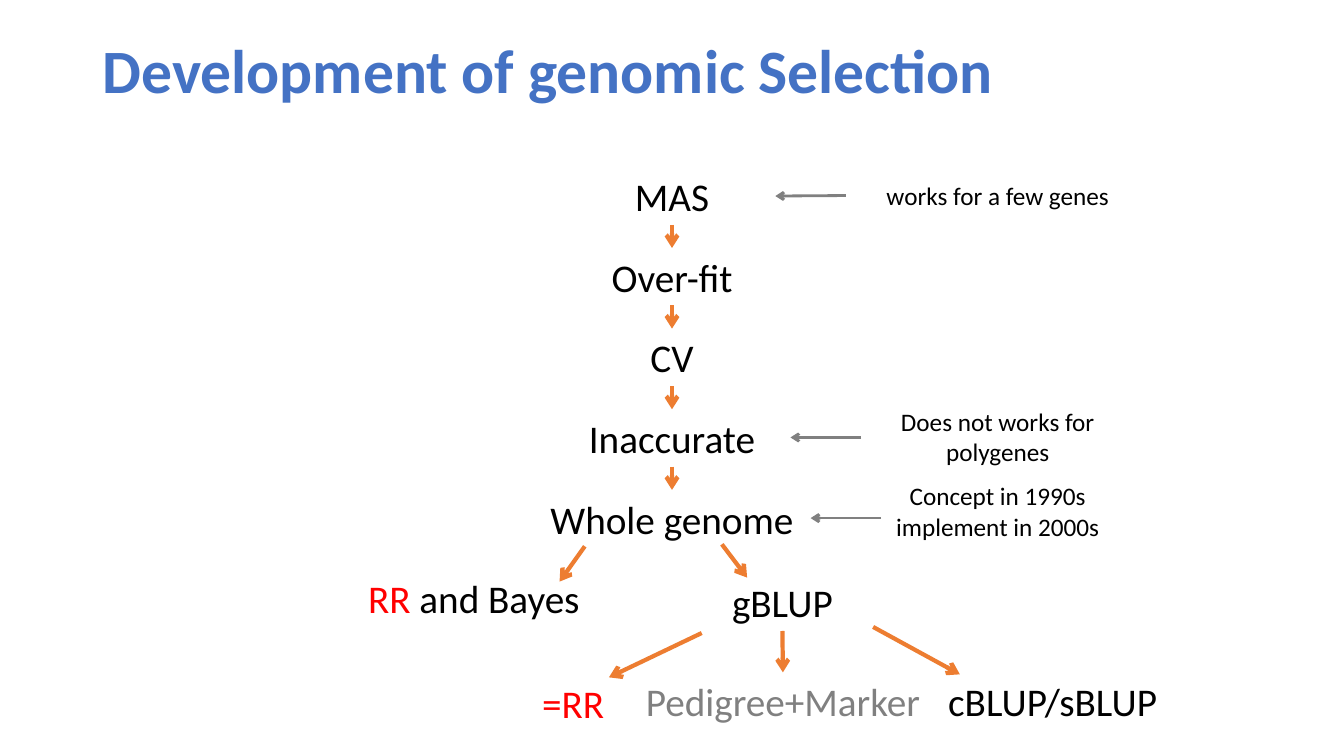
from itertools import pairwise

from lxml import etree
from pptx import Presentation
from pptx import util as u
from pptx.dml.color import RGBColor
from pptx.enum import shapes, text
from pptx.oxml.ns import qn

COLORS = {"title": "4472C4", "text": "000000", "red": "FF0000",
          "gray": "808080", "orange": "ED7D31"}
TOP, LEFT, BOTTOM, RIGHT = range(4)
LABEL_HEIGHT = 0.57
STEP_PITCH = 0.8


def add_label(slide, box, parts, size=28):
    """Add a centred text box whose runs are (wording, colour) pairs."""
    label = slide.shapes.add_textbox(*map(u.Inches, box))
    frame = label.text_frame
    frame.word_wrap = True
    paragraph = frame.paragraphs[0]
    paragraph.alignment = text.PP_ALIGN.CENTER
    for wording, color in parts:
        run = paragraph.add_run()
        run.text = wording
        run.font.name = "Calibri"
        run.font.size = u.Pt(size)
        run.font.color.rgb = RGBColor.from_string(COLORS[color])
    return label


def add_arrow(slide, start=(0, 0), end=(0, 0), color="orange", width=3):
    """Add a straight arrow pointing at its end."""
    arrow = slide.shapes.add_connector(
        shapes.MSO_CONNECTOR.STRAIGHT, *map(u.Inches, (*start, *end)))
    arrow.line.color.rgb = RGBColor.from_string(COLORS[color])
    arrow.line.width = u.Pt(width)
    etree.SubElement(arrow.line._get_or_add_ln(), qn("a:tailEnd"), type="arrow")
    etree.SubElement(arrow._element.spPr, qn("a:effectLst"))
    return arrow


def join(arrow, source, source_side, target, target_side):
    """Attach an arrow to the sides of two labels."""
    arrow.begin_connect(source, source_side)
    arrow.end_connect(target, target_side)


def add_title(slide, left, top, width, height):
    """Add the bold slide heading."""
    heading = slide.shapes.add_textbox(*map(u.Inches, (left, top, width, height)))
    frame = heading.text_frame
    frame.word_wrap = True
    frame.vertical_anchor = text.MSO_ANCHOR.MIDDLE
    paragraph = frame.paragraphs[0]
    paragraph.text = "Development of genomic Selection"
    paragraph.line_spacing = 0.9
    font = paragraph.runs[0].font
    font.name, font.size, font.bold = "Calibri", u.Pt(44), True
    font.color.rgb = RGBColor.from_string(COLORS["title"])


def add_steps(slide, left, top, width):
    """Add the vertical chain of methods and return its labels."""
    steps = []
    names = ("MAS", "Over-fit", "CV", "Inaccurate", "Whole genome")
    for index, name in enumerate(names):
        extra = 0.85 if name == "Whole genome" else 0
        box = (left - extra / 2, top + index * STEP_PITCH,
               width + extra, LABEL_HEIGHT)
        steps.append(add_label(slide, box, [(name, "text")]))
    for upper, lower in pairwise(steps):
        join(add_arrow(slide), upper, BOTTOM, lower, TOP)
    return steps


def add_notes_column(slide, left, top, width, first_step):
    """Add the remarks beside the chain with gray arrows towards it."""
    remarks = (
        ("works for a few genes", 0, 0.4, 0, 0.2),
        ("Does not works for polygenes", 2.24, 0.71, 0.15, 2.6),
        ("Concept in 1990s implement in 2000s", 2.98, 0.71, 0.35, 3.4),
    )
    for wording, offset, height, shift, level in remarks:
        note = add_label(slide, (left, top + offset, width, height),
                         [(wording, "text")], 18)
        tail = left + shift
        arrow = add_arrow(slide, (tail, top + level), (tail - 0.7, top + level),
                          "gray", 2)
        if offset == 0:
            join(arrow, note, LEFT, first_step, RIGHT)


def add_branches(slide, left, top):
    """Add the two families of methods and the variants of gBLUP."""
    labels = (
        (0, 0.25, 2.9, [("RR", "red"), (" and Bayes", "text")]),
        (3.06, 0.29, 2.9, [("gBLUP", "text")]),
        (1.81, 1.29, 1.25, [("=RR", "red")]),
        (2.82, 1.27, 3.39, [("Pedigree+Marker", "gray")]),
        (5.96, 1.27, 2.46, [("cBLUP/sBLUP", "text")]),
    )
    _, gblup, _, pedigree, _ = [
        add_label(slide, (left + x, top + y, width, LABEL_HEIGHT), parts)
        for x, y, width, parts in labels]
    arrows = (
        ((2.55, 0.02), (2.3, 0.37)),
        ((3.91, 0), (4.16, 0.33)),
        ((3.71, 0.88), (2.79, 1.32)),
        ((5.41, 0.82), (6.27, 1.29)),
    )
    for start, end in arrows:
        add_arrow(slide, (left + start[0], top + start[1]),
                  (left + end[0], top + end[1]))
    join(add_arrow(slide), gblup, BOTTOM, pedigree, TOP)


def main():
    """Build the slide and save it."""
    presentation = Presentation()
    presentation.slide_width = u.Inches(13.33)
    presentation.slide_height = u.Inches(7.5)
    slide = presentation.slides.add_slide(presentation.slide_layouts[6])
    add_title(slide, 0.92, 0, 11.5, 1.45)
    steps = add_steps(slide, 5.64, 1.66, 2.05)
    add_notes_column(slide, 8.39, 1.74, 3.01, steps[0])
    add_branches(slide, 3.25, 5.4)
    presentation.save("out.pptx")


if __name__ == "__main__":
    main()
